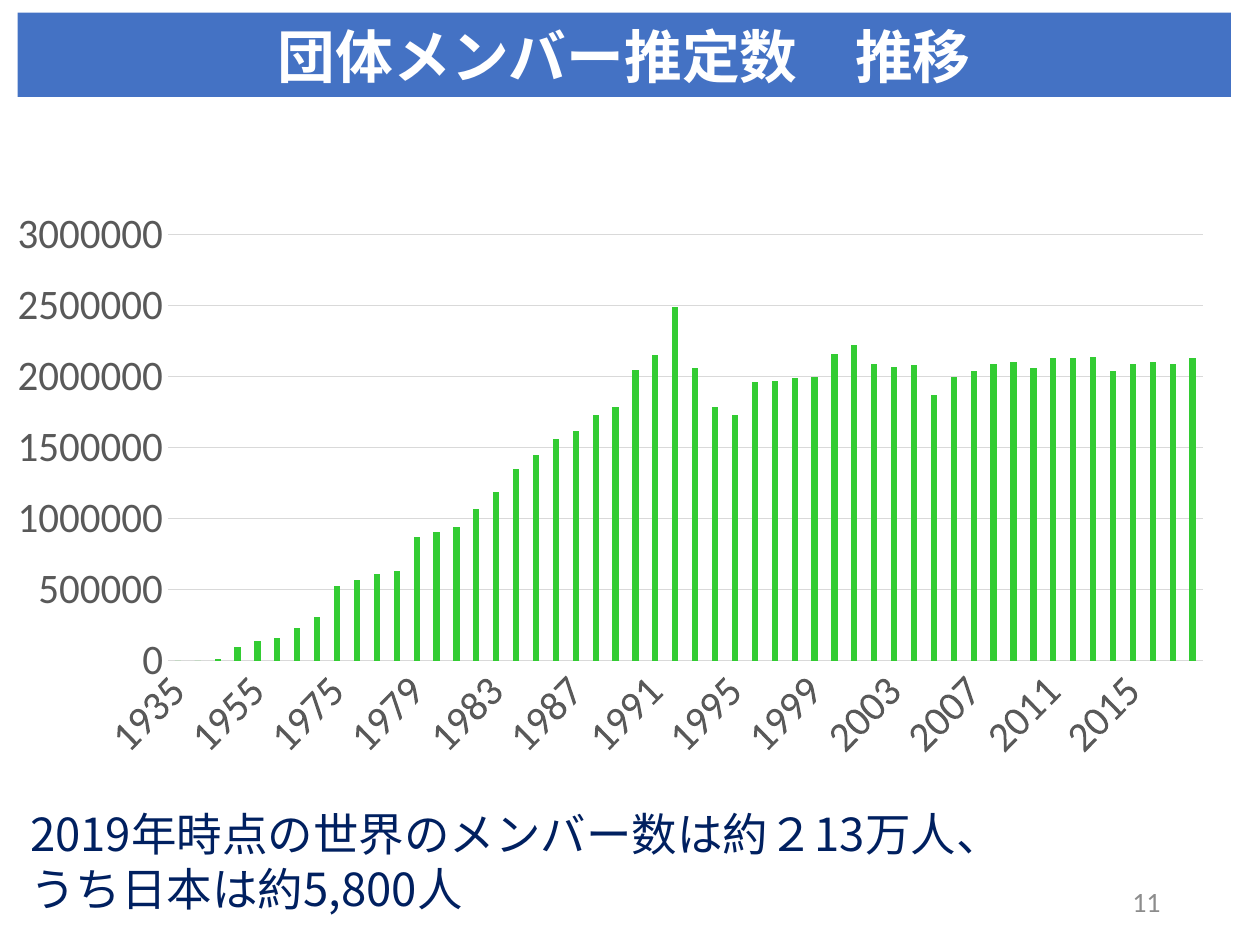
from lxml import etree
from pptx import Presentation
from pptx.chart.data import CategoryChartData
from pptx.dml.color import RGBColor
from pptx.enum.chart import XL_CHART_TYPE as CT, XL_TICK_MARK as TICK
from pptx.enum.text import MSO_ANCHOR as ANCHOR, PP_ALIGN as ALIGN
from pptx.oxml import parse_xml
from pptx.oxml.ns import nsdecls, qn
from pptx.util import Inches, Pt

COLORS = {"banner": "4472C4", "white": "FFFFFF", "bar": "33CC33", "grid": "D9D9D9",
          "axis": "595959", "note": "002060", "number": "8C8C8C"}
YEARS = [*range(1935, 1975, 5), *range(1975, 2019)]
MEMBERS_10K = [
    0, 0, 1, 10, 14, 16, 23, 31, 53, 57, 61, 63, 87, 91, 94, 107, 119, 135,
    145, 156, 162, 173, 179, 205, 215, 249, 206, 179, 173, 196, 197, 199, 200,
    216, 222, 209, 207, 208, 187, 200, 204, 209, 210, 206, 213, 213, 214, 204,
    209, 210, 209, 213]
PLOT_BOX = {"x": 0.102, "y": 0.163, "w": 0.874, "h": 0.647}


def color(name):
    """Return the named palette colour."""
    return RGBColor.from_string(COLORS[name])


def style_font(font, face, size, name, bold=False):
    """Set the face, size, colour and weight of a font."""
    font.name, font.size, font.bold = face, Pt(size), bold
    font.color.rgb = color(name)


def style_text(tf, face, size, name, align, bold=False, east_asian="Noto Sans CJK JP"):
    """Align all paragraphs and format all runs of a text frame."""
    for p in tf.paragraphs:
        p.alignment = align
        for r in p.runs:
            style_font(r.font, face, size, name, bold)
            etree.SubElement(r.font._element, qn("a:ea"), typeface=east_asian)


def add_title(slide, box, text):
    """Turn the title placeholder into a coloured banner."""
    s = slide.shapes.title
    s.left, s.top, s.width, s.height = box
    s.fill.solid()
    s.fill.fore_color.rgb = color("banner")
    tf = s.text_frame
    tf.text = text
    tf.vertical_anchor = ANCHOR.BOTTOM
    tf.paragraphs[0].line_spacing = 0.9
    style_text(tf, "Arial", 33, "white", ALIGN.CENTER, bold=True)


def add_text(slide, box, text, face, size, name, align=ALIGN.LEFT, anchor=ANCHOR.TOP):
    """Add a wrapped text box."""
    tf = slide.shapes.add_textbox(*box).text_frame
    tf.word_wrap = True
    tf.vertical_anchor = anchor
    tf.text = text
    style_text(tf, face, size, name, align)


def set_plot_box(chart):
    """Fix the inner plot area as fractions of the chart."""
    area = chart._chartSpace.chart.plotArea
    for old in area.findall(qn("c:layout")):
        area.remove(old)
    modes = "".join(f'<c:{k}Mode val="edge"/>' for k in "xy")
    sizes = "".join(f'<c:{k} val="{v}"/>' for k, v in PLOT_BOX.items())
    area.insert(0, parse_xml(
        f'<c:layout {nsdecls("c")}><c:manualLayout><c:layoutTarget val="inner"/>'
        f'{modes}{sizes}</c:manualLayout></c:layout>'))


def format_axes(chart):
    """Format both axes, with slanted labels for every fourth category."""
    years, counts = chart.category_axis, chart.value_axis
    for axis in (years, counts):
        axis.major_tick_mark = axis.minor_tick_mark = TICK.NONE
        style_font(axis.tick_labels.font, "Calibri", 24, "axis")
    counts.minimum_scale, counts.maximum_scale, counts.major_unit = 0, 3000000, 500000
    counts.tick_labels.number_format = "0"
    counts.tick_labels.number_format_is_linked = False
    counts.format.line.fill.background()
    for line in (years.format.line, counts.major_gridlines.format.line):
        line.color.rgb = color("grid")
        line.width = Pt(0.75)
    ax = years._element
    ax.find(qn("c:txPr")).find(qn("a:bodyPr")).set("rot", "-2700000")
    skip = parse_xml(f'<c:tickLblSkip {nsdecls("c")} val="4"/>')
    ax.find(qn("c:noMultiLvlLbl")).addprevious(skip)


def add_member_chart(slide, box):
    """Add the column chart of estimated members by year."""
    data = CategoryChartData(number_format="0")
    data.categories = [str(y) for y in YEARS]
    data.add_series("Series 1", [v * 10000 for v in MEMBERS_10K])
    chart = slide.shapes.add_chart(CT.COLUMN_CLUSTERED, *box, data).chart
    chart.has_legend = chart.has_title = False
    chart.font.name, chart.font.size = "Calibri", Pt(10)
    plot = chart.plots[0]
    plot.gap_width, plot.overlap, plot.vary_by_categories = 219, -27, False
    fill = plot.series[0].format.fill
    fill.solid()
    fill.fore_color.rgb = color("bar")
    format_axes(chart)
    set_plot_box(chart)


def main():
    """Build and save the slide."""
    prs = Presentation()
    prs.slide_width, prs.slide_height = Inches(10), Inches(7.5)
    slide = prs.slides.add_slide(prs.slide_layouts[5])
    left, width = Inches(0.14), Inches(9.63)
    add_member_chart(slide, (left, Inches(1.01), width, Inches(5.23)))
    add_title(slide, (left, Inches(0.1), width, Inches(0.67)), "団体メンバー推定数　推移")
    add_text(slide, (left, Inches(6.35), width, Inches(0.98)),
             "2019年時点の世界のメンバー数は約２13万人、\nうち日本は約5,800人",
             "Noto Sans CJK JP", 26, "note")
    add_text(slide, (Inches(7.06), Inches(6.95), Inches(2.25), Inches(0.4)),
             "11", "Calibri", 16, "number", ALIGN.RIGHT, ANCHOR.MIDDLE)
    prs.save("out.pptx")


if __name__ == "__main__":
    main()
